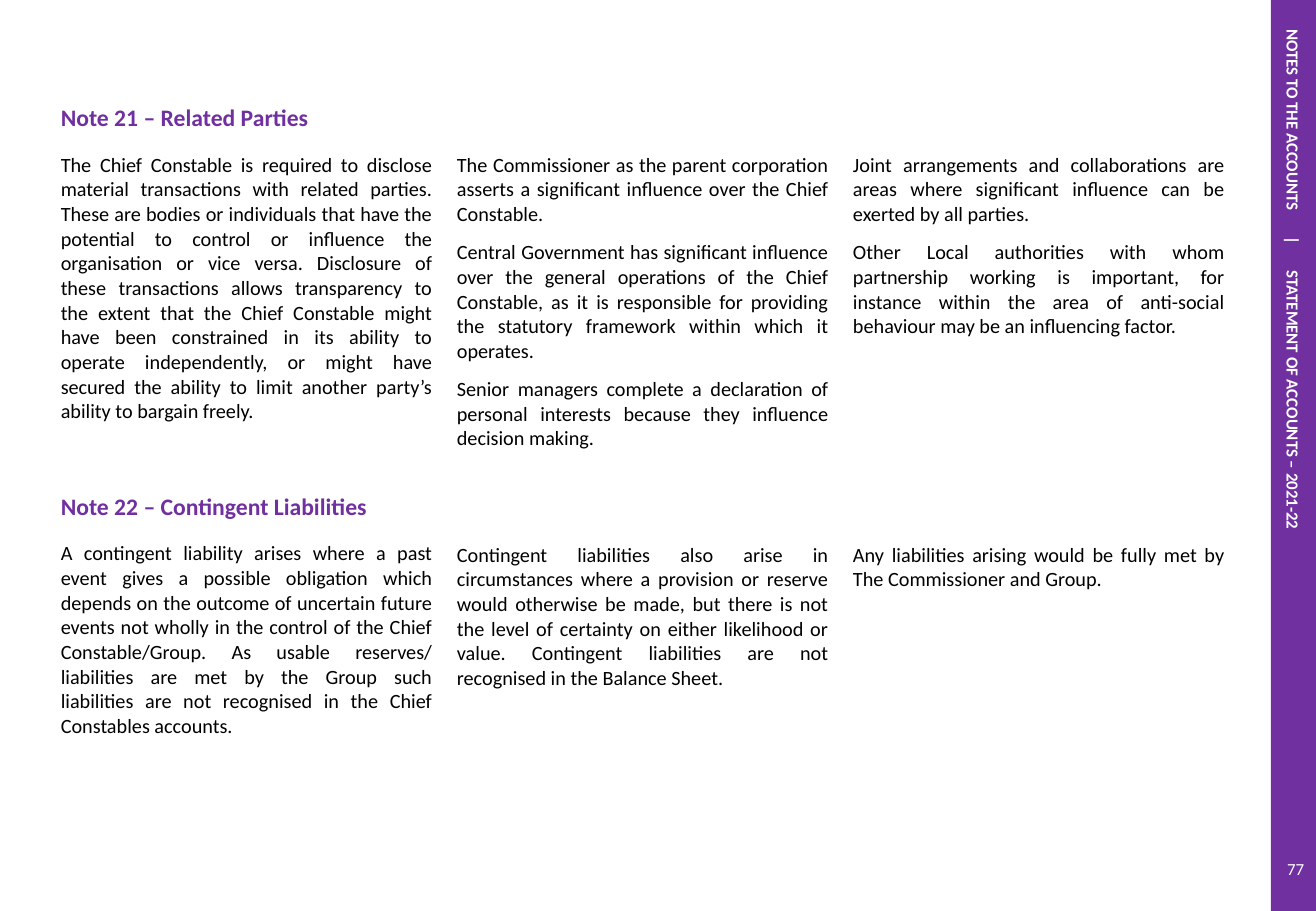
from lxml import etree
from pptx import Presentation
from pptx.dml.color import RGBColor
from pptx.enum.shapes import MSO_SHAPE
from pptx.enum.text import MSO_ANCHOR, PP_ALIGN
from pptx.oxml.ns import qn
from pptx.util import Inches, Pt

RECTANGLE = MSO_SHAPE.RECTANGLE
MIDDLE = MSO_ANCHOR.MIDDLE
LEFT, RIGHT, JUSTIFY = PP_ALIGN.LEFT, PP_ALIGN.RIGHT, PP_ALIGN.JUSTIFY
FONT = "Calibri"
PURPLE, WHITE, BLACK = "7030A0", "FFFFFF", "000000"
ROW_HEIGHTS = [0.21, 0.4, 2.8, 0.4, 1.78]
COLUMN_WIDTH = 3.26

RELATED_PARTIES = [
    ["The Chief Constable is required to disclose material transactions with related parties. "
     "These are bodies or individuals that have the potential to control or influence the "
     "organisation or vice versa. Disclosure of these transactions allows transparency to the "
     "extent that the Chief Constable might have been constrained in its ability to operate "
     "independently, or might have secured the ability to limit another party’s ability to "
     "bargain freely."],
    ["The Commissioner as the parent corporation asserts a significant influence over the "
     "Chief Constable.",
     "Central Government has significant influence over the general operations of the Chief "
     "Constable, as it is responsible for providing the statutory framework within which it "
     "operates.",
     "Senior managers complete a declaration of personal interests because they influence "
     "decision making."],
    ["Joint arrangements and collaborations are areas where significant influence can be "
     "exerted by all parties.",
     "Other Local authorities with whom partnership working is important, for instance within "
     "the area of anti-social behaviour may be an influencing factor."],
]
CONTINGENT_LIABILITIES = [
    ["A contingent liability arises where a past event gives a possible obligation which "
     "depends on the outcome of uncertain future events not wholly in the control of the Chief "
     "Constable/Group. As usable reserves/ liabilities are met by the Group such liabilities "
     "are not recognised in the Chief Constables accounts."],
    ["Contingent liabilities also arise in circumstances where a provision or reserve would "
     "otherwise be made, but there is not the level of certainty on either likelihood or "
     "value. Contingent liabilities are not recognised in the Balance Sheet."],
    ["Any liabilities arising would be fully met by The Commissioner and Group."],
]


def color(value):
    """Return the colour for a hex string."""
    return RGBColor.from_string(value)


def write(text_frame, paragraphs, size, fill, bold=False, alignment=LEFT, space_after=0):
    """Fill a text frame with evenly formatted paragraphs."""
    text_frame.text = "\n".join(paragraphs)
    for paragraph in text_frame.paragraphs:
        paragraph.alignment = alignment
        paragraph.space_after = Pt(space_after)
        for run in paragraph.runs:
            run.font.name = FONT
            run.font.size = Pt(size)
            run.font.bold = bold
            run.font.color.rgb = color(fill)


def set_margins(target, left, top, right, bottom):
    """Set the inner margins of a cell or text frame in inches."""
    target.margin_left, target.margin_top = Inches(left), Inches(top)
    target.margin_right, target.margin_bottom = Inches(right), Inches(bottom)


def add_side_bar(slide, left, top, width, height):
    """Draw the purple side bar with its vertical title and page number."""
    bar = slide.shapes.add_shape(
        RECTANGLE, Inches(left), Inches(top), Inches(width), Inches(height))
    bar.shadow.inherit = False
    bar.fill.solid()
    bar.fill.fore_color.rgb = color(PURPLE)
    bar.line.fill.background()
    frame = bar.text_frame
    write(frame, ["NOTES TO THE ACCOUNTS\t|\tSTATEMENT OF ACCOUNTS – 2021-22"], 10, WHITE, True)
    frame.vertical_anchor = MIDDLE
    set_margins(frame, 0.05, 0.24, 0.05, 0.05)
    bar.element.txBody.bodyPr.set("vert", "vert")
    properties = frame.paragraphs[0]._p.get_or_add_pPr()
    tab_list = etree.SubElement(properties, qn("a:tabLst"))
    for position in (1.71, 1.99):
        etree.SubElement(tab_list, qn("a:tab"), pos=str(Inches(position)), algn="l")

    number = slide.shapes.add_textbox(
        Inches(left + 0.03), Inches(top + 6.95), Inches(width - 0.03), Inches(0.4))
    number.text_frame.word_wrap = True
    number.text_frame.vertical_anchor = MIDDLE
    set_margins(number.text_frame, 0, 0.05, 0.1, 0.05)
    write(number.text_frame, ["77"], 10, WHITE, alignment=RIGHT)


def add_note(table, heading_row, span, heading, columns, space_after, tops):
    """Write a note's heading row and the text columns below it."""
    heading_cell = table.cell(heading_row, 0)
    heading_cell.merge(table.cell(heading_row, span - 1))
    set_margins(heading_cell, 0.1, 0.04, 0.1, 0.04)
    write(heading_cell.text_frame, [heading], 14, PURPLE, True)
    for index, (paragraphs, top) in enumerate(zip(columns, tops)):
        cell = table.cell(heading_row + 1, index)
        set_margins(cell, 0.1, top, 0.1, 0.04)
        write(cell.text_frame, paragraphs, 12, BLACK, alignment=JUSTIFY, space_after=space_after)


def add_notes_table(slide, left, top):
    """Place the three-column table that holds both notes."""
    table = slide.shapes.add_table(
        len(ROW_HEIGHTS), 3, Inches(left), Inches(top),
        Inches(3 * COLUMN_WIDTH), Inches(sum(ROW_HEIGHTS))).table
    table.first_row = False
    table.horz_banding = False
    for column in table.columns:
        column.width = Inches(COLUMN_WIDTH)
    for row, height in zip(table.rows, ROW_HEIGHTS):
        row.height = Inches(height)
    add_note(table, 1, 2, "Note 21 – Related Parties", RELATED_PARTIES, 8, (0.04, 0.04, 0.04))
    add_note(table, 3, 3, "Note 22 – Contingent Liabilities", CONTINGENT_LIABILITIES, 6,
             (0.04, 0.05, 0.05))
    for cell in table.iter_cells():
        cell.fill.background()
        if not cell.text_frame.text:
            set_margins(cell, 0, 0, 0, 0)
            etree.SubElement(cell.text_frame.paragraphs[0]._p, qn("a:endParaRPr"), sz="800")


def main():
    """Build and save the slide."""
    presentation = Presentation()
    presentation.slide_width = Inches(10.83)
    presentation.slide_height = Inches(7.5)
    slide = presentation.slides.add_slide(presentation.slide_layouts[6])
    add_side_bar(slide, 10.46, 0, 0.37, 7.52)
    add_notes_table(slide, 0.4, 0.61)
    presentation.save("out.pptx")


if __name__ == "__main__":
    main()
